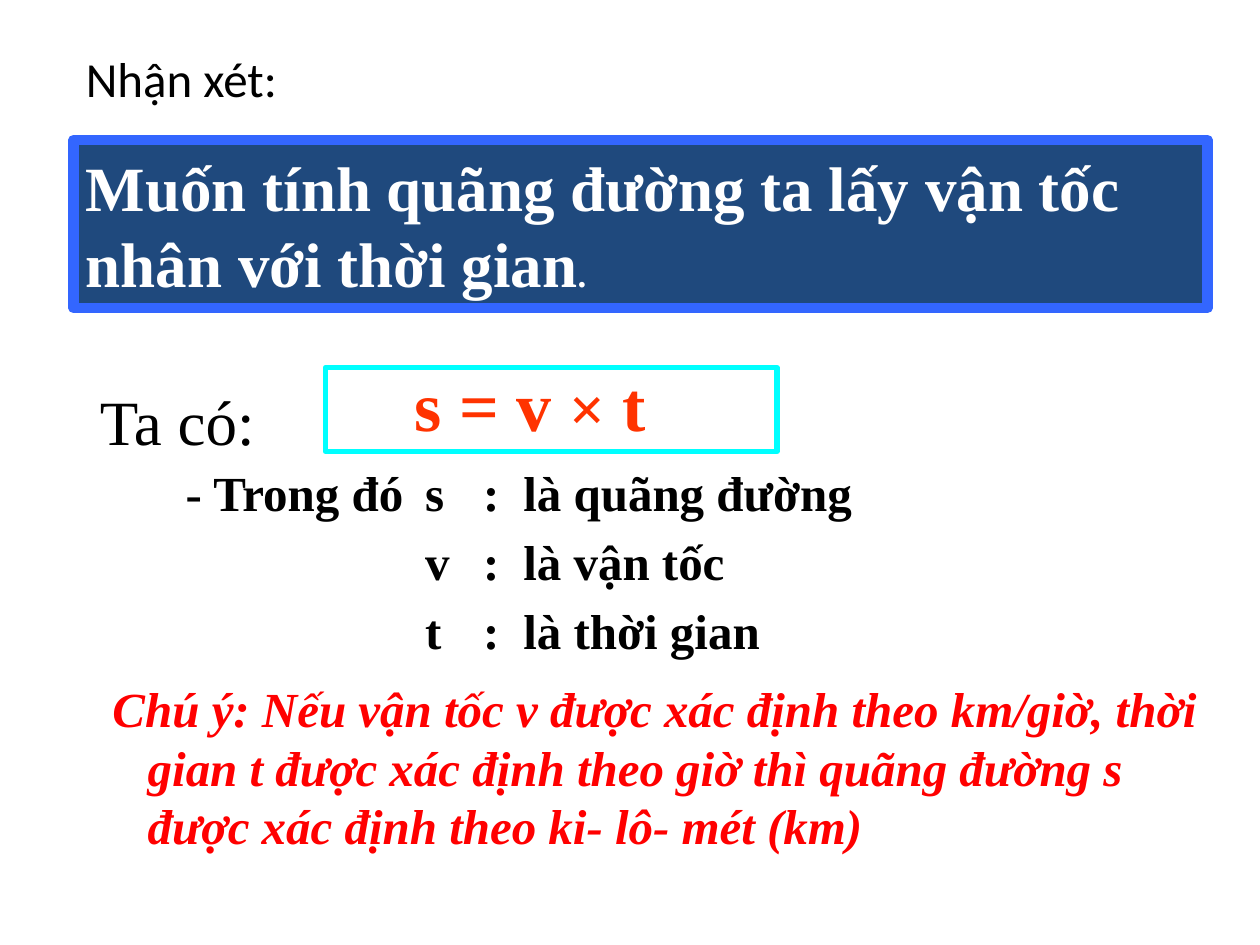
import pptx
import pptx.dml.color
import pptx.enum.shapes
import pptx.enum.text
import pptx.oxml.ns
import pptx.util
from lxml import etree

THEME = {
    "ink": "000000", "paper": "FFFFFF", "navy": "1F497D", "blue": "3366FF",
    "cyan": "00FFFF", "orange": "FF3300", "red": "FF0000",
    "sans": "Calibri", "serif": "Times New Roman",
    "small": 20, "body": 28, "large": 36, "formula": 40,
}
WIDTH, HEIGHT = 10, 7.5
COLUMNS, ROWS = 720, 540
ALIGN = pptx.enum.text.PP_ALIGN
ANCHOR = pptx.enum.text.MSO_ANCHOR

TERMS = [
    ("- Trong đó", "s", "là quãng đường"),
    ("", "v", "là vận tốc"),
    ("", "t", "là thời gian"),
]
TERM_TABS = (1.9, 2.36, 2.68)
NOTE = ("Chú ý: Nếu vận tốc v được xác định theo km/giờ, thời gian t được xác định "
        "theo giờ thì quãng đường s được xác định theo ki- lô- mét (km)")

BLOCKS = [
    {"cell": (42, 24, 660, 41), "font": "sans", "size": "body", "color": "ink",
     "lines": [[("Nhận xét:", {})]]},
    {"cell": (42, 80, 648, 96), "fill": "navy", "line": ("blue", 6),
     "anchor": ANCHOR.MIDDLE, "size": "large", "color": "paper", "bold": True,
     "lines": [[("Muốn tính quãng đường ta lấy vận tốc", {})],
               [("nhân với thời gian", {}), (".", {"size": "small"})]]},
    {"cell": (50, 220, 114, 47), "size": "large", "color": "ink",
     "paragraph": {"line_spacing": 0.9}, "before": 20,
     "lines": [[("Ta có:", {})]]},
    {"cell": (186, 210, 258, 48), "line": ("cyan", 3), "lines": []},
    {"cell": (222, 203, 162, 55), "size": "formula", "color": "orange", "bold": True,
     "paragraph": {"alignment": ALIGN.CENTER}, "before": 50,
     "lines": [[("s = v ", {}), ("×", {"size": "large"}), (" t", {})]]},
    {"cell": (99, 261, 408, 134), "size": "body", "color": "ink", "bold": True,
     "before": 20, "tabs": TERM_TABS,
     "lines": [[(f"{lead}\t{symbol}\t:\t{meaning}", {})] for lead, symbol, meaning in TERMS]},
    {"cell": (50, 384, 642, 134), "size": "body", "color": "red", "bold": True,
     "italic": True, "before": 20, "hanging": (0.38, -0.28),
     "lines": [[(NOTE, {})]]},
]


def color(name):
    return pptx.dml.color.RGBColor.from_string(THEME[name])


def set_attributes(target, values):
    for name, value in values.items():
        setattr(target, name, value)


def add_child(parent, tag, **attributes):
    child = etree.SubElement(parent, pptx.oxml.ns.qn(tag))
    for name, value in attributes.items():
        child.set(name, str(value))
    return child


def add_frame(slide, block):
    left, top, width, height = block["cell"]
    place = [pptx.util.Inches(length) for length in (
        left * WIDTH / COLUMNS, top * HEIGHT / ROWS,
        width * WIDTH / COLUMNS, height * HEIGHT / ROWS)]
    if "line" not in block:
        return slide.shapes.add_textbox(*place)
    shape = slide.shapes.add_shape(pptx.enum.shapes.MSO_SHAPE.RECTANGLE, *place)
    shape.shadow.inherit = False
    if "fill" in block:
        shape.fill.solid()
        shape.fill.fore_color.rgb = color(block["fill"])
    else:
        shape.fill.background()
    line_color, line_width = block["line"]
    shape.line.color.rgb = color(line_color)
    shape.line.width = pptx.util.Pt(line_width)
    return shape


def format_paragraph(paragraph, block):
    set_attributes(paragraph, {"alignment": ALIGN.LEFT, **block.get("paragraph", {})})
    properties = paragraph._p.get_or_add_pPr()
    if "hanging" in block:
        for name, length in zip(("marL", "indent"), block["hanging"]):
            properties.set(name, str(pptx.util.Inches(length)))
    if "before" in block:
        spacing = add_child(properties, "a:spcBef")
        add_child(spacing, "a:spcPct", val=block["before"] * 1000)
    if "tabs" in block:
        tabs = add_child(properties, "a:tabLst")
        for position in block["tabs"]:
            add_child(tabs, "a:tab", pos=pptx.util.Inches(position), algn="l")


def add_text(shape, block):
    frame = shape.text_frame
    set_attributes(frame, {"word_wrap": True,
                           "vertical_anchor": block.get("anchor", ANCHOR.TOP)})
    for index, line in enumerate(block["lines"]):
        paragraph = frame.add_paragraph() if index else frame.paragraphs[0]
        format_paragraph(paragraph, block)
        for text, changes in line:
            style = {**block, **changes}
            run = paragraph.add_run()
            run.text = text
            set_attributes(run.font, {
                "name": THEME[style.get("font", "serif")],
                "size": pptx.util.Pt(THEME[style["size"]]),
                "bold": style.get("bold", False),
                "italic": style.get("italic", False),
            })
            run.font.color.rgb = color(style["color"])


def main():
    presentation = pptx.Presentation()
    set_attributes(presentation, {"slide_width": pptx.util.Inches(WIDTH),
                                  "slide_height": pptx.util.Inches(HEIGHT)})
    slide = presentation.slides.add_slide(presentation.slide_layouts[6])
    for block in BLOCKS:
        add_text(add_frame(slide, block), block)
    presentation.save("out.pptx")


if __name__ == "__main__":
    main()
